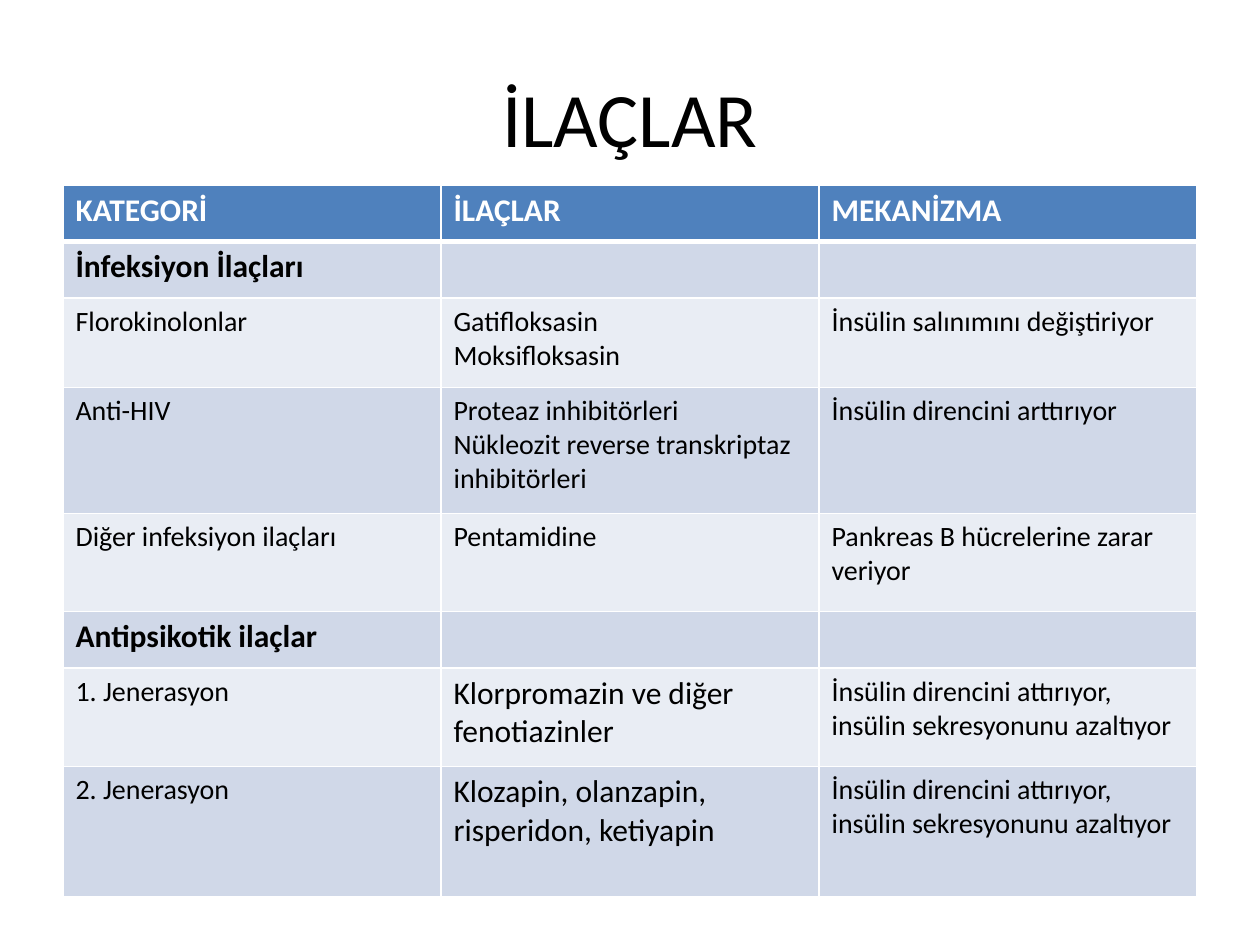
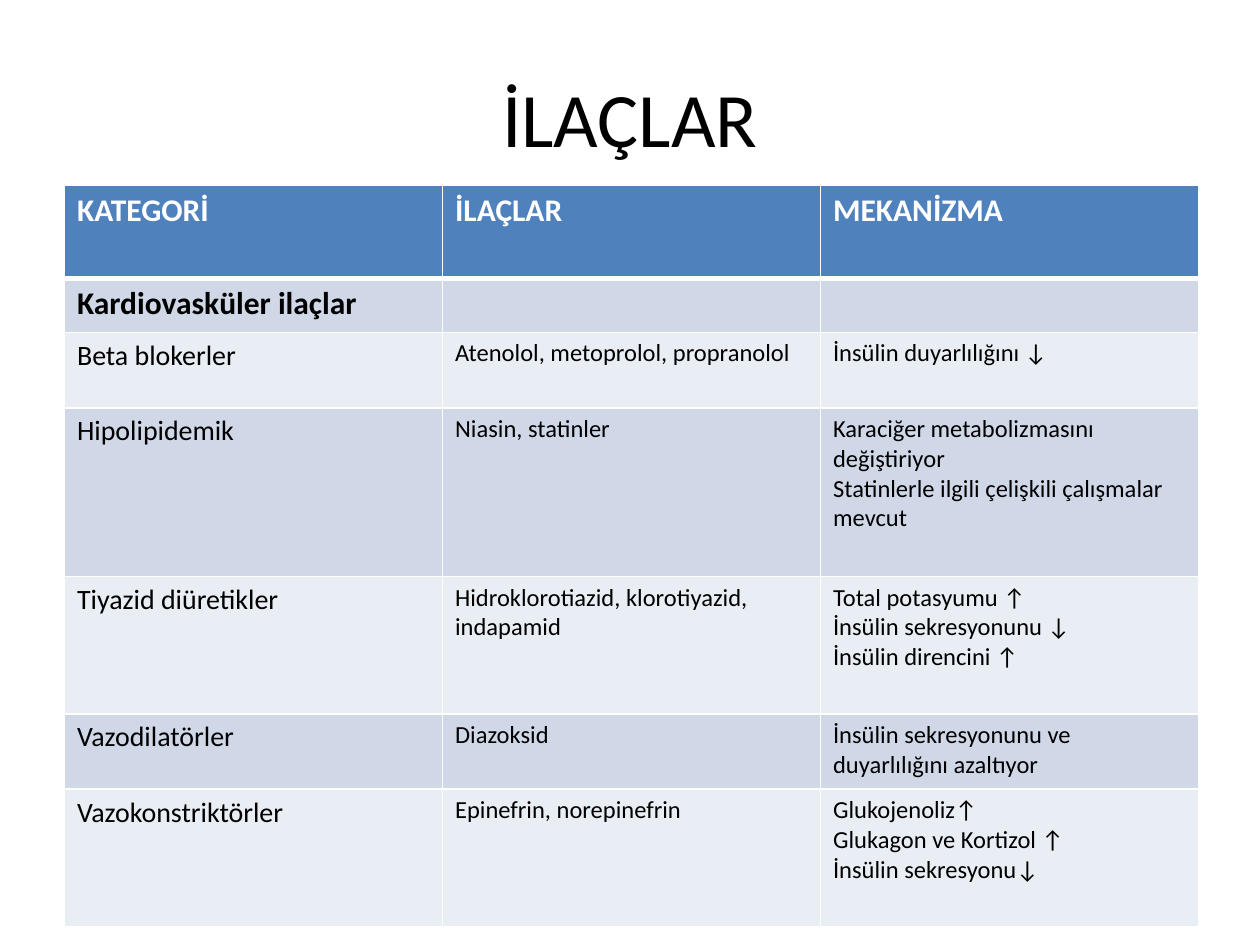
import pptx
import pptx.util
import pptx.dml.color
import pptx.enum.text
from pptx.oxml import parse_xml
from pptx.oxml.ns import nsdecls

Cm, Pt = pptx.util.Cm, pptx.util.Pt

FONT = "Calibri"
BLACK, WHITE = "000000", "FFFFFF"
HEADER_FILL = "4F81BD"
BAND_FILLS = ("E9EDF4", "D0D8E8")
TITLE = "İLAÇLAR"
HEADINGS = ("KATEGORİ", "İLAÇLAR", "MEKANİZMA")
TABLE_TOP, COLUMN_WIDTH = 3.73, 7.62

SECTION = (18, 18, 18)
EVEN = (16, 16, 16)
LARGE_DRUGS = (16, 18, 16)
SMALL_DETAILS = (16, 14, 14)

SLIDES = [
    {"left": 1.27, "header_height": 1.14, "rows": [
        (1.14, SECTION, ("İnfeksiyon İlaçları", "", "")),
        (1.8, EVEN, ("Florokinolonlar", "Gatifloksasin\nMoksifloksasin",
                     "İnsülin salınımını değiştiriyor")),
        (2.54, EVEN, ("Anti-HIV",
                      "Proteaz inhibitörleri\nNükleozit reverse transkriptaz inhibitörleri",
                      "İnsülin direncini arttırıyor")),
        (1.98, EVEN, ("Diğer infeksiyon ilaçları", "Pentamidine",
                      "Pankreas B hücrelerine zarar veriyor")),
        (1.14, SECTION, ("Antipsikotik ilaçlar", "", "")),
        (1.98, LARGE_DRUGS, ("1. Jenerasyon", "Klorpromazin ve diğer fenotiazinler",
                             "İnsülin direncini attırıyor, insülin sekresyonunu azaltıyor")),
        (2.64, LARGE_DRUGS, ("2. Jenerasyon", "Klozapin, olanzapin, risperidon, ketiyapin",
                             "İnsülin direncini attırıyor, insülin sekresyonunu azaltıyor")),
    ]},
    {"left": 1.3, "header_height": 1.88, "rows": [
        (1.09, SECTION, ("Kardiovasküler ilaçlar", "", "")),
        (1.52, SMALL_DETAILS, ("Beta blokerler", "Atenolol, metoprolol, propranolol",
                               "İnsülin duyarlılığını ↓")),
        (3.4, SMALL_DETAILS, ("Hipolipidemik", "Niasin, statinler",
                              "Karaciğer metabolizmasını değiştiriyor\n"
                              "Statinlerle ilgili çelişkili çalışmalar mevcut")),
        (2.77, SMALL_DETAILS, ("Tiyazid diüretikler",
                               "Hidroklorotiazid, klorotiyazid, indapamid",
                               "Total potasyumu ↑\nİnsülin sekresyonunu ↓\nİnsülin direncini ↑")),
        (1.52, SMALL_DETAILS, ("Vazodilatörler", "Diazoksid",
                               "İnsülin sekresyonunu ve duyarlılığını azaltıyor")),
        (2.77, SMALL_DETAILS, ("Vazokonstriktörler", "Epinefrin, norepinefrin",
                               "Glukojenoliz↑\nGlukagon ve Kortizol ↑\nİnsülin sekresyonu↓")),
    ]},
]


def rgb(value):
    return pptx.dml.color.RGBColor.from_string(value)


def format_text(tf, size, color, bold=False):
    for p in tf.paragraphs:
        p.font.size = Pt(size)
        for r in p.runs:
            r.font.name = FONT
            r.font.size = Pt(size)
            r.font.bold = bold
            r.font.color.rgb = rgb(color)


def set_borders(cell, top, bottom):
    tc_pr = cell._tc.get_or_add_tcPr()
    widths = (("lnL", 1), ("lnR", 1), ("lnT", top), ("lnB", bottom))
    for index, (side, width) in enumerate(widths):
        tc_pr.insert(index, parse_xml(
            f'<a:{side} {nsdecls("a")} w="{Pt(width)}"><a:solidFill>'
            f'<a:srgbClr val="{WHITE}"/></a:solidFill></a:{side}>'))


def add_title(s):
    title = s.shapes.title
    title.left, title.top, title.width, title.height = Cm(1.27), Cm(0.76), Cm(22.86), Cm(3.18)
    tf = title.text_frame
    tf.text = TITLE
    tf.vertical_anchor = pptx.enum.text.MSO_ANCHOR.MIDDLE
    tf.paragraphs[0].alignment = pptx.enum.text.PP_ALIGN.CENTER
    format_text(tf, 44, BLACK)


def add_drug_table(s, left, header_height, rows):
    rows = [(header_height, SECTION, HEADINGS)] + rows
    total_height = sum(height for height, _, _ in rows)
    table = s.shapes.add_table(len(rows), len(HEADINGS), Cm(left), Cm(TABLE_TOP),
                               Cm(COLUMN_WIDTH * len(HEADINGS)), Cm(total_height)).table
    for column in table.columns:
        column.width = Cm(COLUMN_WIDTH)
    for i, (height, sizes, texts) in enumerate(rows):
        table.rows[i].height = Cm(height)
        for j, (size, text) in enumerate(zip(sizes, texts)):
            cell = table.cell(i, j)
            cell.text_frame.text = text
            format_text(cell.text_frame, size, BLACK if i else WHITE, sizes == SECTION)
            cell.fill.solid()
            cell.fill.fore_color.rgb = rgb(BAND_FILLS[i % 2] if i else HEADER_FILL)
            set_borders(cell, 3 if i == 1 else 1, 1 if i else 3)


def main():
    prs = pptx.Presentation()
    prs.slide_width, prs.slide_height = Cm(25.4), Cm(19.05)
    for content in SLIDES:
        s = prs.slides.add_slide(prs.slide_layouts[5])
        add_title(s)
        add_drug_table(s, **content)
    prs.save("out.pptx")


if __name__ == "__main__":
    main()
